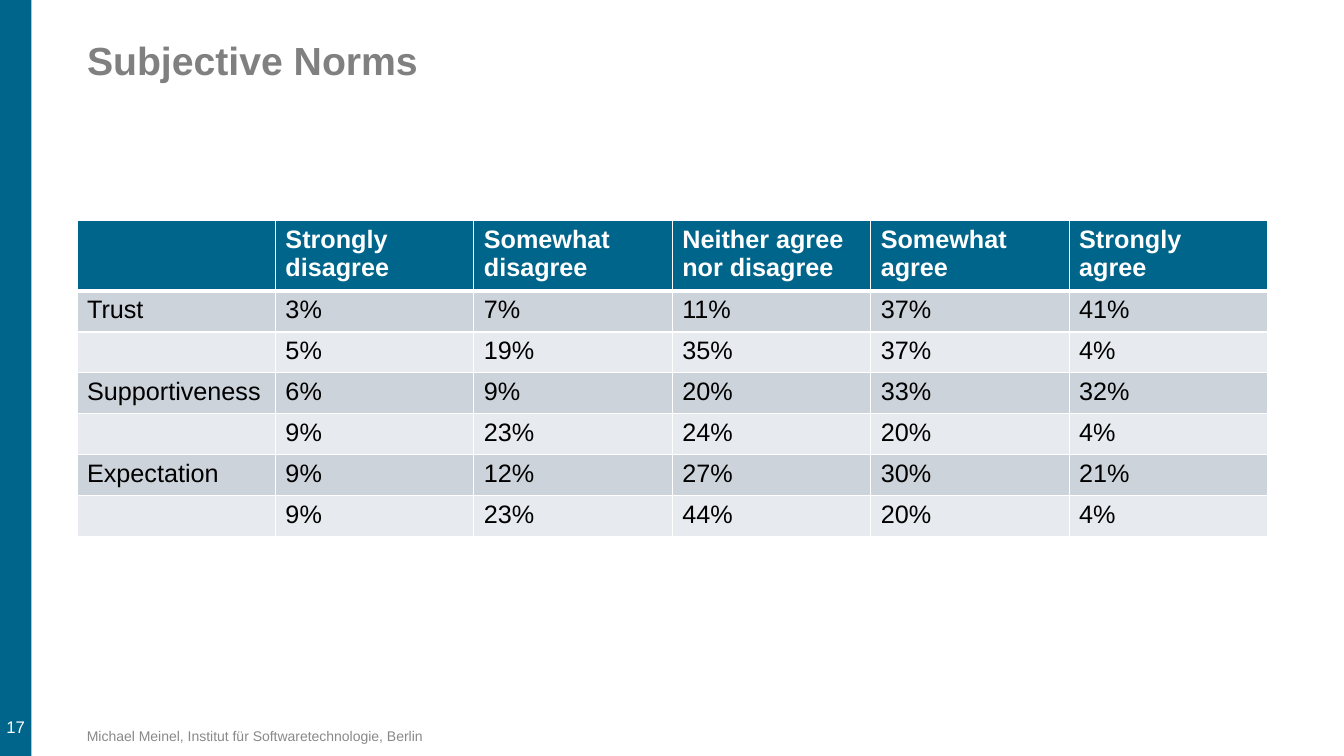
"""Build the Subjective Norms survey table slide."""
from lxml import etree
from pptx import Presentation
from pptx.dml.color import RGBColor
from pptx.enum import shapes, text
from pptx.oxml import ns
from pptx.util import Pt

TITLE = "Subjective Norms"
FOOTER = "Michael Meinel, Institut für Softwaretechnologie, Berlin"
PAGE_NUMBER = "17"
HEADER = ["", "Strongly disagree", "Somewhat disagree", "Neither agree nor disagree",
          "Somewhat\nagree", "Strongly\vagree"]
ANSWERS = [
    ["Trust", "3%", "7%", "11%", "37%", "41%"],
    ["", "5%", "19%", "35%", "37%", "4%"],
    ["Supportiveness", "6%", "9%", "20%", "33%", "32%"],
    ["", "9%", "23%", "24%", "20%", "4%"],
    ["Expectation", "9%", "12%", "27%", "30%", "21%"],
    ["", "9%", "23%", "44%", "20%", "4%"],
]

BLUE = RGBColor(0x00, 0x65, 0x8B)
WHITE = RGBColor(0xFF, 0xFF, 0xFF)
BLACK = RGBColor(0x00, 0x00, 0x00)
TITLE_GRAY = RGBColor(0x80, 0x80, 0x80)
FOOTER_GRAY = RGBColor(0x89, 0x89, 0x89)
BANDS = [RGBColor(0xCC, 0xD3, 0xDA), RGBColor(0xE7, 0xEA, 0xEE)]

FONT = "Arial"
SLIDE_WIDTH, SLIDE_HEIGHT = 960, 540
BAR_WIDTH = 22.5
LEFT = 55
TABLE_TOP, TABLE_WIDTH = 157.5, 850.5
HEADER_HEIGHT, ROW_HEIGHT = 47, 29.2


def write(frame, content, size=18, color=BLACK, bold=False, align=None, spacing=None):
    """Put formatted text into a text frame."""
    frame.text = content
    for paragraph in frame.paragraphs:
        paragraph.alignment = align
        paragraph.line_spacing = spacing
        for run in paragraph.runs:
            run.font.name = FONT
            run.font.size = Pt(size)
            run.font.bold = bold
            run.font.color.rgb = color


def add_border(cell, side, width):
    """Add a solid white border to one side of a cell."""
    properties = cell._tc.get_or_add_tcPr()
    line = etree.SubElement(properties, ns.qn(f"a:ln{side}"), w=str(Pt(width)))
    fill = etree.SubElement(line, ns.qn("a:solidFill"))
    etree.SubElement(fill, ns.qn("a:srgbClr"), val=str(WHITE))


def add_answer_table(slide):
    """Add the table of answer shares."""
    rows = [HEADER] + ANSWERS
    height = HEADER_HEIGHT + ROW_HEIGHT * len(ANSWERS)
    table = slide.shapes.add_table(len(rows), len(HEADER), Pt(LEFT), Pt(TABLE_TOP),
                                   Pt(TABLE_WIDTH), Pt(height)).table
    for column in table.columns:
        column.width = Pt(TABLE_WIDTH / len(HEADER))
    for row_index, values in enumerate(rows):
        is_header = row_index == 0
        table.rows[row_index].height = Pt(HEADER_HEIGHT if is_header else ROW_HEIGHT)
        borders = {"L": 1, "R": 1, "T": 3 if row_index == 1 else 1, "B": 3 if is_header else 1}
        for column_index, value in enumerate(values):
            cell = table.cell(row_index, column_index)
            for side, width in borders.items():
                add_border(cell, side, width)
            cell.fill.solid()
            cell.fill.fore_color.rgb = BLUE if is_header else BANDS[(row_index - 1) % 2]
            write(cell.text_frame, value, color=WHITE if is_header else BLACK, bold=is_header)


def main():
    """Build and save the slide."""
    presentation = Presentation()
    presentation.slide_width, presentation.slide_height = Pt(SLIDE_WIDTH), Pt(SLIDE_HEIGHT)
    slide = presentation.slides.add_slide(presentation.slide_layouts[5])

    bar = slide.shapes.add_shape(shapes.MSO_SHAPE.RECTANGLE, 0, 0, Pt(BAR_WIDTH), Pt(SLIDE_HEIGHT))
    bar.shadow.inherit = False
    bar.fill.solid()
    bar.fill.fore_color.rgb = BLUE
    bar.line.fill.background()

    number = slide.shapes.add_textbox(0, Pt(420.5), Pt(BAR_WIDTH), Pt(113)).text_frame
    number.word_wrap = False
    number.vertical_anchor = text.MSO_ANCHOR.BOTTOM
    number.margin_left = number.margin_right = Pt(2.9)
    number.margin_top = number.margin_bottom = Pt(7.2)
    write(number, PAGE_NUMBER, size=12, color=WHITE, align=text.PP_ALIGN.CENTER)

    footer = slide.shapes.add_textbox(Pt(LEFT), Pt(515.5), Pt(324), Pt(20)).text_frame
    footer.word_wrap = True
    footer.vertical_anchor = text.MSO_ANCHOR.MIDDLE
    write(footer, FOOTER, size=10, color=FOOTER_GRAY)

    title = slide.shapes.title
    title.left, title.top, title.width, title.height = Pt(LEFT), Pt(26), Pt(792), Pt(78)
    title.text_frame.vertical_anchor = text.MSO_ANCHOR.TOP
    write(title.text_frame, TITLE, size=28, color=TITLE_GRAY, bold=True,
          align=text.PP_ALIGN.LEFT, spacing=0.9)

    add_answer_table(slide)
    presentation.save("out.pptx")


if __name__ == "__main__":
    main()
